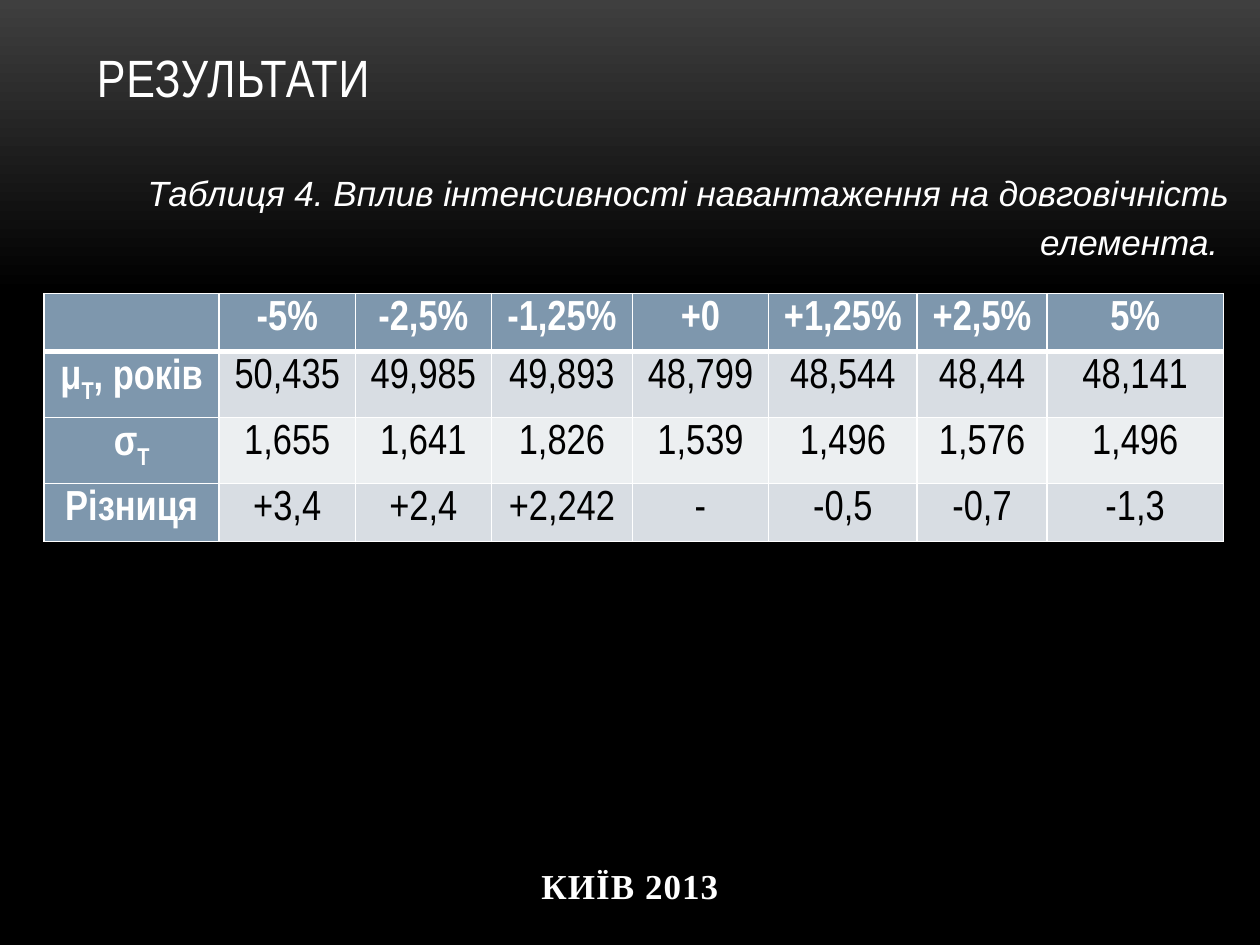
import copy
from dataclasses import dataclass

import lxml.etree
import pptx
import pptx.dml.color
import pptx.enum.text
import pptx.oxml.ns
import pptx.util

Inches = pptx.util.Inches
Align = pptx.enum.text.PP_ALIGN
Anchor = pptx.enum.text.MSO_ANCHOR
qualified = pptx.oxml.ns.qn


@dataclass
class Theme:
    """Colours, fonts and type sizes of the slide."""
    white: str = "FFFFFF"
    black: str = "000000"
    charcoal: str = "3F3F3F"
    header: str = "7E97AD"
    bands: tuple = ("D8DDE3", "ECEFF1")
    narrow: str = "Arial Narrow"
    sans: str = "Arial"
    serif: str = "Times New Roman"
    title_size: int = 30
    table_size: int = 24
    body_size: int = 20
    thin: int = 1
    thick: int = 3


class SlideBuilder:
    """Draws styled elements on the current slide."""

    def __init__(self, slide, theme):
        self.slide = slide
        self.theme = theme

    def color(self, value):
        return pptx.dml.color.RGBColor.from_string(value)

    def style(self, run, name, size, color, bold=False, italic=False, spacing=0):
        font = run.font
        font.name, font.size = name, pptx.util.Pt(size)
        font.bold, font.italic = bold, italic
        font.color.rgb = self.color(color)
        if spacing:
            run._r.get_or_add_rPr().set("spc", str(spacing))

    def background(self):
        fill = self.slide.background.fill
        fill.gradient()
        fill.gradient_angle = 270
        colors = (self.theme.charcoal, self.theme.black)
        for stop, color, position in zip(fill.gradient_stops, colors, (0, 0.31)):
            stop.color.rgb = self.color(color)
            stop.position = position
        stops = next(self.slide.element.iter(qualified("a:gsLst")))
        last = copy.deepcopy(stops[-1])
        last.set("pos", "100000")
        stops.append(last)

    def text(self, box, lines, anchor, align, **style):
        shape = self.slide.shapes.add_textbox(*map(Inches, box))
        frame = shape.text_frame
        frame.text = "\n".join(lines)
        frame.word_wrap = True
        frame.vertical_anchor = anchor
        for paragraph in frame.paragraphs:
            paragraph.alignment = align
            for run in paragraph.runs:
                self.style(run, color=self.theme.white, **style)
        return frame

    def border(self, cell, side, width):
        properties = cell._tc.get_or_add_tcPr()
        line = lxml.etree.SubElement(properties, qualified(f"a:ln{side}"),
                                     w=str(pptx.util.Pt(width)))
        fill = lxml.etree.SubElement(line, qualified("a:solidFill"))
        lxml.etree.SubElement(fill, qualified("a:srgbClr"), val=self.theme.white)

    def cell(self, cell, parts, row, column):
        theme = self.theme
        heading = row == 0 or column == 0
        cell.margin_left = cell.margin_right = Inches(0.07)
        cell.margin_top = cell.margin_bottom = 0
        widths = {"L": theme.thin, "R": theme.thin,
                  "T": theme.thick if row == 1 else theme.thin,
                  "B": theme.thick if row == 0 else theme.thin}
        for side, width in widths.items():
            self.border(cell, side, width)
        cell.fill.solid()
        fill = theme.header if heading else theme.bands[(row - 1) % 2]
        cell.fill.fore_color.rgb = self.color(fill)
        paragraph = cell.text_frame.paragraphs[0]
        paragraph.alignment = Align.CENTER
        paragraph.line_spacing = 1.15
        for index, part in enumerate(parts):
            if not part:
                continue
            run = paragraph.add_run()
            run.text = part
            self.style(run, theme.narrow, theme.table_size,
                       theme.white if heading else theme.black, bold=heading)
            if index == 1:
                run._r.get_or_add_rPr().set("baseline", "-25000")

    def table(self, left, top, widths, heights, rows):
        table = self.slide.shapes.add_table(
            len(rows), len(widths), Inches(left), Inches(top),
            Inches(sum(widths)), Inches(sum(heights))).table
        for column, width in zip(table.columns, widths):
            column.width = Inches(width)
        for row, height in zip(table.rows, heights):
            row.height = Inches(height)
        for row, values in enumerate(rows):
            for column, value in enumerate(values):
                parts = value if isinstance(value, tuple) else (value,)
                self.cell(table.cell(row, column), parts, row, column)


def main():
    presentation = pptx.Presentation()
    presentation.slide_width, presentation.slide_height = Inches(10), Inches(7.5)
    theme = Theme()
    slide = presentation.slides.add_slide(presentation.slide_layouts[6])
    builder = SlideBuilder(slide, theme)
    builder.background()
    builder.text((0.67, 0.3, 8.67, 0.61), ["РЕЗУЛЬТАТИ"], Anchor.BOTTOM, Align.LEFT,
                 name=theme.narrow, size=theme.title_size, spacing=50)
    rows = [
        ["", "-5%", "-2,5%", "-1,25%", "+0", "+1,25%", "+2,5%", "5%"],
        [("μ", "Т", ", років"), "50,435", "49,985", "49,893", "48,799", "48,544",
         "48,44", "48,141"],
        [("σ", "Т"), "1,655", "1,641", "1,826", "1,539", "1,496", "1,576", "1,496"],
        ["Різниця", "+3,4", "+2,4", "+2,242", "-", "-0,5", "-0,7", "-1,3"],
    ]
    builder.table(0.35, 2.33, [1.39, 1.08, 1.08, 1.12, 1.08, 1.18, 1.03, 1.4],
                  [0.36, 0.42, 0.42, 0.36], rows)
    caption = builder.text(
        (0.51, 1.31, 9.35, 0.84),
        ["Таблиця 4. Вплив інтенсивності навантаження на довговічність", "елемента."],
        Anchor.MIDDLE, Align.RIGHT, name=theme.sans, size=theme.body_size, italic=True)
    space = caption.paragraphs[-1].add_run()
    space.text = " "
    builder.style(space, theme.sans, theme.table_size, theme.white, italic=True)
    builder.text((0, 6.64, 10, 0.78), ["КИЇВ 2013"], Anchor.MIDDLE, Align.CENTER,
                 name=theme.serif, size=theme.body_size, bold=True, spacing=60)
    presentation.save("out.pptx")


if __name__ == "__main__":
    main()
